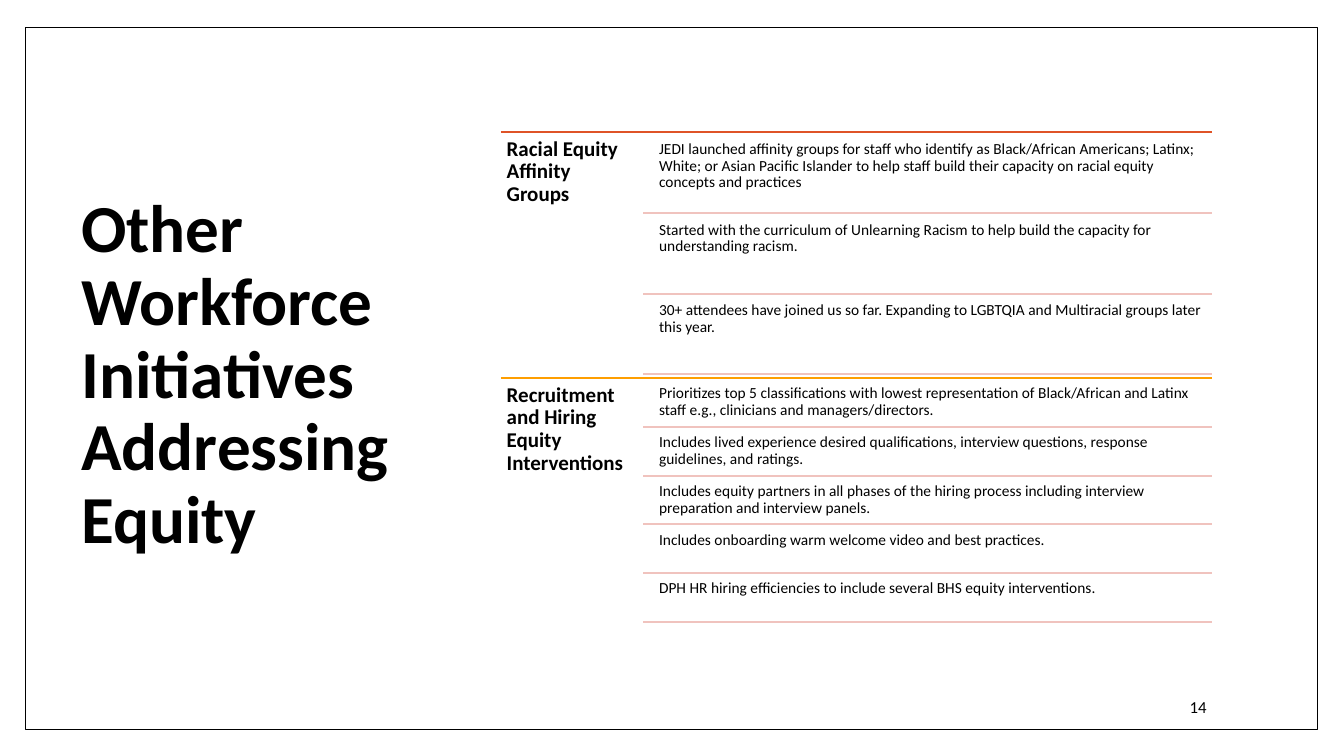
import pptx
import pptx.util
import pptx.dml.color
import pptx.enum.shapes
import pptx.enum.text
import pptx.oxml.ns
import lxml.etree

Cm, Pt = pptx.util.Cm, pptx.util.Pt
ALIGN = pptx.enum.text.PP_ALIGN
ANCHOR = pptx.enum.text.MSO_ANCHOR

TITLE = "Other Workforce Initiatives Addressing Equity"
NUMBER = "14"
TOPICS = [
    ("Racial Equity Affinity Groups", "DF5327", [
        "JEDI launched affinity groups for staff who identify as Black/African Americans; Latinx; "
        "White; or Asian Pacific Islander to help staff build their capacity on racial equity "
        "concepts and practices",
        "Started with the curriculum of Unlearning Racism to help build the capacity for "
        "understanding racism.",
        "30+ attendees have joined us so far. Expanding to LGBTQIA and Multiracial groups later "
        "this year.",
    ]),
    ("Recruitment and Hiring Equity Interventions", "FE9E00", [
        "Prioritizes top 5 classifications with lowest representation of Black/African and Latinx "
        "staff e.g., clinicians and managers/directors.",
        "Includes lived experience desired qualifications, interview questions, response "
        "guidelines, and ratings.",
        "Includes equity partners in all phases of the hiring process including interview "
        "preparation and interview panels.",
        "Includes onboarding warm welcome video and best practices.",
        "DPH HR hiring efficiencies to include several BHS equity interventions.",
    ]),
]
BLACK, WHITE, PINK = "000000", "FFFFFF", "F0C3BE"

# Columns of the list and height of one topic, in cm
LEFT, RULE, ITEM, RIGHT = 12.62, 16.21, 16.48, 30.55
TOP, BLOCK = 3.33, 6.2
GAP = 0.05  # share of a row's height

deck = pptx.Presentation()
deck.slide_width, deck.slide_height = Cm(33.87), Cm(19.05)
slide = deck.slides.add_slide(deck.slide_layouts[6])


def color(code):
    return pptx.dml.color.RGBColor.from_string(code)


def add_frame(x, y, w, h):
    box = slide.shapes.add_shape(pptx.enum.shapes.MSO_SHAPE.RECTANGLE, Cm(x), Cm(y), Cm(w), Cm(h))
    box.shadow.inherit = False
    box.fill.solid()
    box.fill.fore_color.rgb = color(WHITE)
    box.line.color.rgb = color(BLACK)
    box.line.width = Pt(1)


def add_text(text, x, y, w, h, size, bold=False, inset=None, anchor=ANCHOR.TOP,
             align=ALIGN.LEFT, spacing=0.9):
    frame = slide.shapes.add_textbox(Cm(x), Cm(y), Cm(w), Cm(h)).text_frame
    frame.word_wrap = True
    frame.vertical_anchor = anchor
    if inset is not None:
        frame.margin_left = frame.margin_right = Cm(inset)
        frame.margin_top = frame.margin_bottom = Cm(inset)
    frame.text = text
    para = frame.paragraphs[0]
    para.alignment = align
    para.line_spacing = spacing
    font = para.runs[0].font
    font.name, font.size, font.bold = "Calibri", Pt(size), bold
    font.color.rgb = color(BLACK)
    return para


def add_rule(x, y, code):
    """Draw a level line from x to the right edge of the list."""
    rule = slide.shapes.add_connector(
        pptx.enum.shapes.MSO_CONNECTOR.STRAIGHT, Cm(x), Cm(y), Cm(RIGHT), Cm(y))
    rule.line.color.rgb = color(code)
    rule.line.width = Pt(1.5)
    lxml.etree.SubElement(rule._element.spPr, pptx.oxml.ns.qn("a:effectLst"))


def add_topic(top, label, code, items):
    add_rule(LEFT, top, code)
    add_text(label, LEFT, top, RULE - LEFT, BLOCK, 15, bold=True, inset=0.15)
    count = len(items)
    row = BLOCK / (count + GAP * (count + 1))
    for i, item in enumerate(items):
        y = top + row * (GAP + i * (1 + GAP))
        add_text(item, ITEM, y, RIGHT - ITEM, row, 11, inset=0.13)
        add_rule(RULE, y + row, PINK)


add_frame(0.64, 0.69, 32.56, 17.7)
add_text(TITLE, 1.8, 1.7, 9.35, 15.57, 48, bold=True, anchor=ANCHOR.MIDDLE)
number = add_text(NUMBER, 25.91, 17.3, 4.75, 1.02, 12, anchor=ANCHOR.MIDDLE,
                  align=ALIGN.RIGHT, spacing=1.0)
number.space_after = Pt(6)
for n, topic in enumerate(TOPICS):
    add_topic(TOP + n * BLOCK, *topic)

deck.save("out.pptx")
